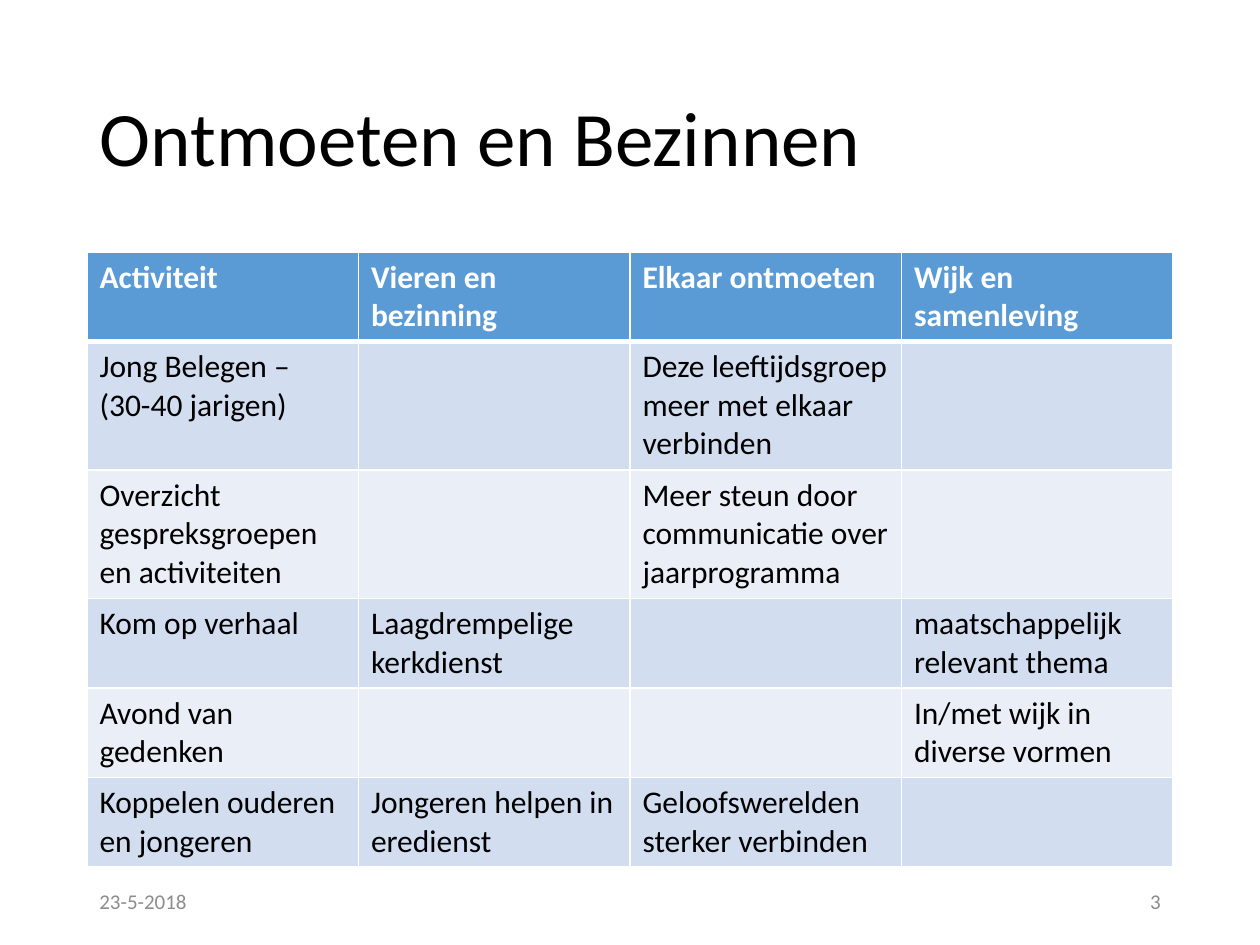
from lxml.etree import SubElement
from pptx import Presentation
from pptx.dml.color import RGBColor
from pptx.enum.text import MSO_ANCHOR as Anchor, PP_ALIGN as Align
from pptx.oxml.ns import qn
from pptx.util import Inches, Pt

LEFT, WIDTH = 0.69, 8.62
FONT = "Calibri"
HEADER_FILL = "5B9BD5"
BAND_FILLS = ("D2DEEF", "EAEFF7")
ROW_HEIGHTS = (0.71, 1.02, 1.02, 0.71, 0.71, 0.71)
ACTIVITIES = (
    ("Activiteit", "Vieren en bezinning", "Elkaar ontmoeten", "Wijk en samenleving"),
    ("Jong Belegen –\n(30-40 jarigen)", "", "Deze leeftijdsgroep meer met elkaar verbinden", ""),
    ("Overzicht gespreksgroepen en activiteiten", "",
     "Meer steun door communicatie over jaarprogramma", ""),
    ("Kom op verhaal", "Laagdrempelige kerkdienst", "", "maatschappelijk relevant thema"),
    ("Avond van gedenken", "", "", "In/met wijk in diverse vormen"),
    ("Koppelen ouderen en jongeren", "Jongeren helpen in eredienst",
     "Geloofswerelden sterker verbinden", ""),
)


def color(hex_code):
    """Return the colour for a hex string."""
    return RGBColor.from_string(hex_code)


def write(frame, text, size, ink, bold=False, align=Align.LEFT):
    """Write each line of text as a paragraph with one formatted run."""
    for index, line in enumerate(text.split("\n")):
        paragraph = frame.add_paragraph() if index else frame.paragraphs[0]
        paragraph.alignment = align
        run = paragraph.add_run()
        run.text = line
        run.font.name = FONT
        run.font.size = Pt(size)
        run.font.bold = bold
        run.font.color.rgb = color(ink)


def add_title(slide, text):
    """Place and fill the title placeholder."""
    title = slide.shapes.title
    title.left, title.top = Inches(LEFT), Inches(0.4)
    title.width, title.height = Inches(WIDTH), Inches(1.45)
    frame = title.text_frame
    frame.word_wrap = True
    frame.vertical_anchor = Anchor.MIDDLE
    write(frame, text, 44, "000000")
    frame.paragraphs[0].line_spacing = 0.9


def add_borders(cell, top, bottom):
    """Draw white cell borders with the given top and bottom widths."""
    properties = cell._tc.get_or_add_tcPr()
    for side, width in (("L", 1), ("R", 1), ("T", top), ("B", bottom)):
        border = SubElement(properties, qn(f"a:ln{side}"), w=str(Pt(width)))
        SubElement(SubElement(border, qn("a:solidFill")), qn("a:srgbClr"), val="FFFFFF")


def add_activity_table(slide):
    """Add the banded table of activities and their goals."""
    columns = len(ACTIVITIES[0])
    table = slide.shapes.add_table(
        len(ACTIVITIES), columns, Inches(LEFT), Inches(2),
        Inches(WIDTH), Inches(sum(ROW_HEIGHTS))).table
    for column in table.columns:
        column.width = Inches(WIDTH / columns)
    for row, (height, texts) in enumerate(zip(ROW_HEIGHTS, ACTIVITIES)):
        table.rows[row].height = Inches(height)
        header = row == 0
        for column, text in enumerate(texts):
            cell = table.cell(row, column)
            add_borders(cell, top=3 if row == 1 else 1, bottom=3 if header else 1)
            cell.fill.solid()
            cell.fill.fore_color.rgb = color(HEADER_FILL if header else BAND_FILLS[(row - 1) % 2])
            if text:
                write(cell.text_frame, text, 18, "FFFFFF" if header else "000000", header)


def add_footer(slide, text, left, align):
    """Add a small grey text at the foot of the slide."""
    frame = slide.shapes.add_textbox(
        Inches(left), Inches(6.95), Inches(2.25), Inches(0.4)).text_frame
    frame.word_wrap = True
    frame.vertical_anchor = Anchor.MIDDLE
    write(frame, text, 12, "8C8C8C", align=align)


def main():
    """Build and save the slide."""
    deck = Presentation()
    deck.slide_width, deck.slide_height = Inches(10), Inches(7.5)
    slide = deck.slides.add_slide(deck.slide_layouts[5])
    add_title(slide, "Ontmoeten en Bezinnen")
    add_activity_table(slide)
    add_footer(slide, "23-5-2018", LEFT, Align.LEFT)
    add_footer(slide, "3", LEFT + WIDTH - 2.25, Align.RIGHT)
    deck.save("out.pptx")


if __name__ == "__main__":
    main()
